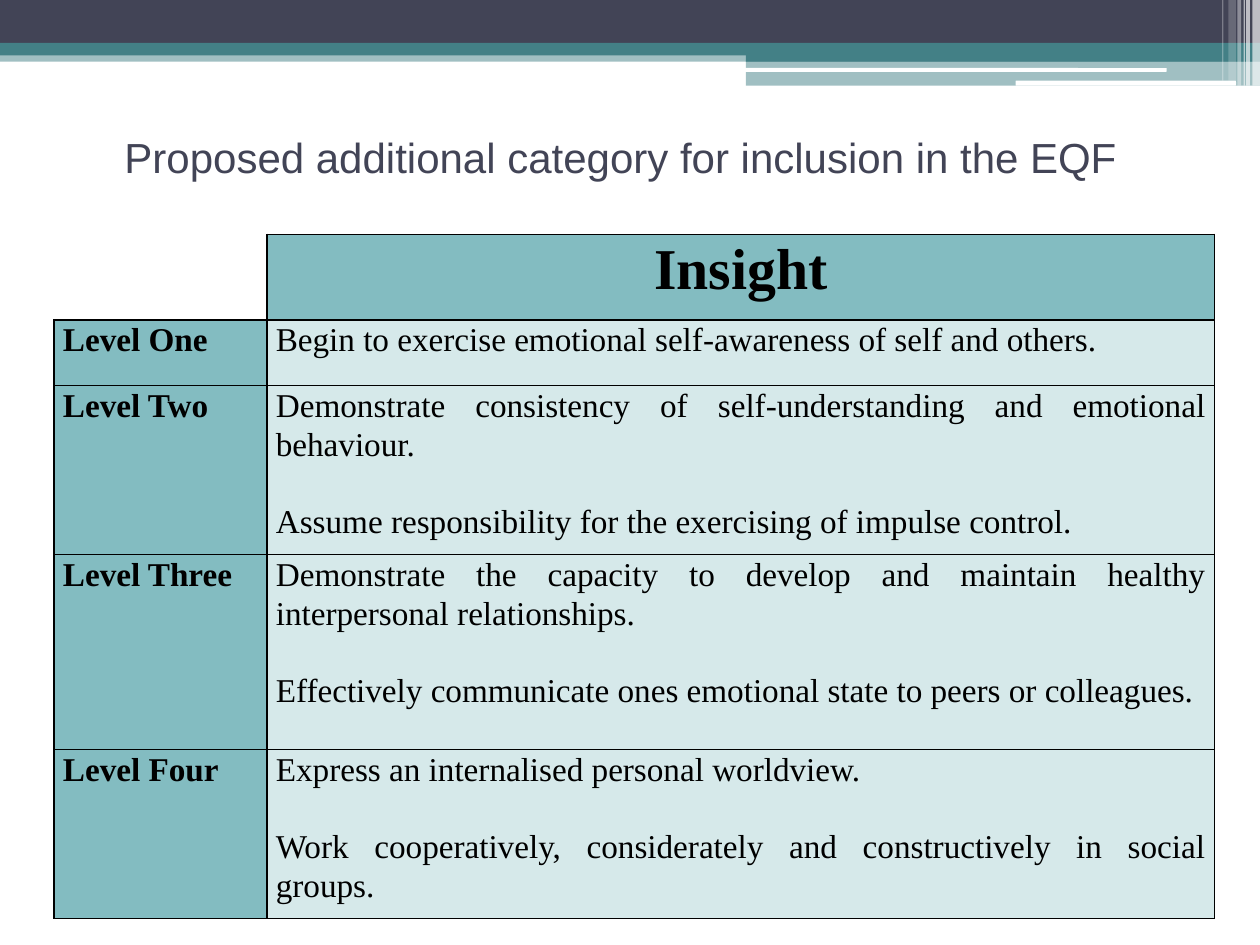
"""Build the slide that proposes Insight as an added EQF category."""
from lxml import etree
from pptx import Presentation
from pptx.dml.color import RGBColor
from pptx.enum.shapes import MSO_SHAPE
from pptx.enum.text import MSO_ANCHOR, PP_ALIGN
from pptx.oxml.ns import qn
from pptx.util import Inches, Pt

RECT, ROUND = MSO_SHAPE.RECTANGLE, MSO_SHAPE.ROUNDED_RECTANGLE
CENTER, JUSTIFY = PP_ALIGN.CENTER, PP_ALIGN.JUSTIFY
MIDDLE = MSO_ANCHOR.MIDDLE
NAVY, TEAL, WHITE, BLACK = "424456", "438086", "FFFFFF", "000000"
HEAD, BODY = "83BCC1", "D6E9EA"
SERIF = "Times New Roman"


def paint(fill, color, alpha=100):
    fill.solid()
    fill.fore_color.rgb = RGBColor.from_string(color)
    if alpha < 100:
        tint = fill._xPr.find(qn("a:solidFill"))[0]
        etree.SubElement(tint, qn("a:alpha"), val=str(alpha * 1000))


def write(para, text, align, color, **style):
    para.alignment = align
    run = para.add_run()
    run.text = text
    paint(run.font.fill, color)
    for name, value in style.items():
        setattr(run.font, name, value)


deck = Presentation()
deck.slide_width, deck.slide_height = Inches(10), Inches(7.5)
slide = deck.slides.add_slide(deck.slide_layouts[6])

bands = [
    (RECT, 0, 0.4, 10, 0.09, TEAL, 50),
    (RECT, 0, 0, 10, 0.34, NAVY, 100),
    (RECT, 0, 0.34, 10, 0.1, TEAL, 100),
    (RECT, 5.92, 0.39, 4.08, 0.1, TEAL, 100),
    (RECT, 5.92, 0.48, 4.08, 0.2, TEAL, 50),
    (ROUND, 5.91, 0.54, 3.35, 0.03, WHITE, 100),
    (ROUND, 8.06, 0.64, 1.75, 0.04, WHITE, 100),
]
stripes = [
    (9.94, 0.06, 0.68, 65),
    (9.89, 0.03, 0.68, 65),
    (9.87, 0.01, 0.68, 60),
    (9.82, 0.03, 0.68, 40),
    (9.75, 0.06, 0.64, 20),
    (9.7, 0.01, 0.64, 30),
]
bands += [(RECT, left, 0, width, height, WHITE, alpha)
          for left, width, height, alpha in stripes]
for kind, left, top, width, height, color, alpha in bands:
    band = slide.shapes.add_shape(
        kind, Inches(left), Inches(top), Inches(width), Inches(height))
    band.shadow.inherit = False
    band.line.fill.background()
    paint(band.fill, color, alpha)

title = slide.shapes.add_textbox(
    Inches(0.67), Inches(0.99), Inches(8.51), Inches(0.51)).text_frame
title.word_wrap = True
title.vertical_anchor = MIDDLE
write(title.paragraphs[0], "Proposed additional category for inclusion in the EQF",
      CENTER, NAVY, name="Arial", size=Pt(24))

rows = [
    (0.68, "", ["Insight"]),
    (0.52, "Level One",
     ["Begin to exercise emotional self-awareness of self and others."]),
    (1.34, "Level Two",
     ["Demonstrate consistency of self-understanding and emotional behaviour.",
      "Assume responsibility for the exercising of impulse control."]),
    (1.55, "Level Three",
     ["Demonstrate the capacity to develop and maintain healthy interpersonal relationships.",
      "Effectively communicate ones emotional state to peers or colleagues."]),
    (1.34, "Level Four",
     ["Express an internalised personal worldview.",
      "Work cooperatively, considerately and constructively in social groups."]),
]
grid = slide.shapes.add_table(
    len(rows), 2, Inches(0.43), Inches(1.86), Inches(9.21), Inches(5.43)).table
grid.first_row = grid.horz_banding = False
for column, width in zip(grid.columns, (1.69, 7.52)):
    column.width = Inches(width)
inset = {"margin_left": Inches(0.07), "margin_right": Inches(0.07),
         "margin_top": 0, "margin_bottom": 0}

for r, (height, level, points) in enumerate(rows):
    grid.rows[r].height = Inches(height)
    for c, texts in enumerate(([level], points)):
        cell = grid.cell(r, c)
        blank = r == c == 0
        for name, value in inset.items():
            setattr(cell, name, value)
        props = cell._tc.get_or_add_tcPr()
        for side in ("lnL", "lnR", "lnT", "lnB"):
            edge = etree.SubElement(props, qn("a:" + side), w=str(Pt(1)))
            if blank and side in ("lnL", "lnT"):
                etree.SubElement(edge, qn("a:noFill"))
            else:
                ink = etree.SubElement(edge, qn("a:solidFill"))
                etree.SubElement(ink, qn("a:srgbClr"), val=BLACK)
        if blank:
            cell.fill.background()
            continue
        label = r == 0 or c == 0
        paint(cell.fill, HEAD if label else BODY)
        frame = cell.text_frame
        for i, text in enumerate(texts):
            para = frame.add_paragraph() if i else frame.paragraphs[0]
            para.line_spacing = 1.06
            para.space_before = Pt(22 if i else 0)
            write(para, text, JUSTIFY if r else CENTER, BLACK, name=SERIF,
                  size=Pt(19 if r else 33), bold=label)

deck.save("out.pptx")
